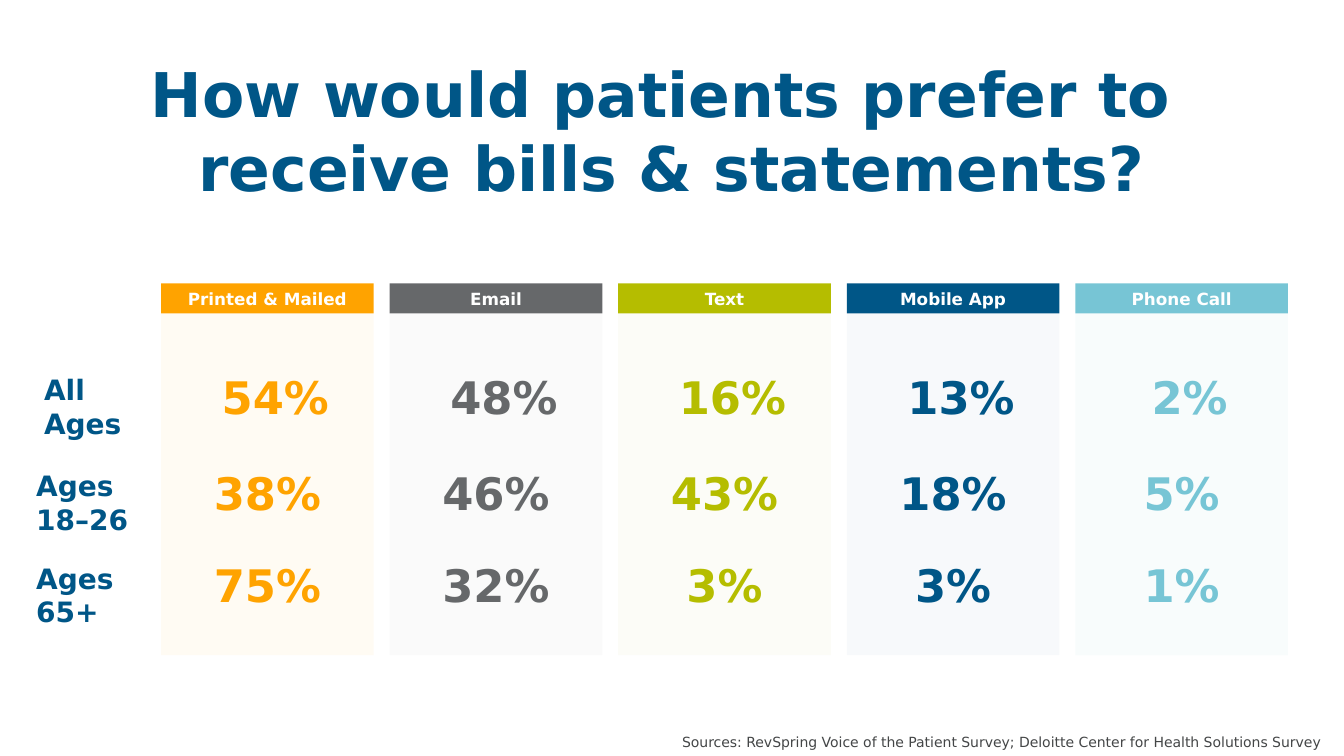
"""Build the slide on how patients prefer to receive bills and statements."""

from dataclasses import dataclass
from typing import Optional

import lxml.etree
import pptx
import pptx.dml.color
import pptx.enum.shapes
import pptx.enum.text
import pptx.oxml.ns
import pptx.shapes.autoshape
import pptx.slide
import pptx.text.text
import pptx.util

Cm = pptx.util.Cm
ALIGN = pptx.enum.text.PP_ALIGN

FONT = "DejaVu Sans"
COLORS = {
    "orange": "FFA300",
    "cream": "FFEDCC",
    "gray": "66686A",
    "green": "B5BD00",
    "blue": "005687",
    "aqua": "77C5D5",
    "white": "FFFFFF",
    "source": "444647",
}

COLUMN_LEFT, COLUMN_PITCH, COLUMN_WIDTH = 4.06, 5.76, 5.36
HEADER_TOP, HEADER_HEIGHT, PANEL_HEIGHT = 7.14, 0.76, 8.61
VALUE_WIDTH, VALUE_HEIGHT = 3.73, 1.63


@dataclass(frozen=True)
class Box:
    """Position and size in centimetres."""

    left: float
    top: float
    width: float
    height: float

    def lengths(self) -> tuple:
        """Return the four lengths in slide units."""
        return Cm(self.left), Cm(self.top), Cm(self.width), Cm(self.height)


@dataclass(frozen=True)
class TextStyle:
    """Look of one piece of text."""

    size: float
    color: str
    bold: bool = True
    alignment: pptx.enum.text.PP_ALIGN = ALIGN.LEFT


@dataclass(frozen=True)
class Channel:
    """A delivery channel with one value for each age group."""

    name: str
    color: str
    panel_color: str
    panel_opacity: int
    values: tuple[str, ...]


@dataclass(frozen=True)
class AgeGroup:
    """A row of values, with the sideways shift of its texts."""

    label: str
    top: float
    shift: float = 0


CHANNELS = (
    Channel("Printed & Mailed", "orange", "cream", 22, ("54%", "38%", "75%")),
    Channel("Email", "gray", "gray", 3, ("48%", "46%", "32%")),
    Channel("Text", "green", "green", 3, ("16%", "43%", "3%")),
    Channel("Mobile App", "blue", "blue", 3, ("13%", "18%", "3%")),
    Channel("Phone Call", "aqua", "aqua", 5, ("2%", "5%", "1%")),
)
AGE_GROUPS = (
    AgeGroup("All Ages", 9.19, 0.2),
    AgeGroup("Ages 18–26", 11.6),
    AgeGroup("Ages 65+", 13.94),
)


def rgb(name: str) -> pptx.dml.color.RGBColor:
    """Look up a named colour."""
    return pptx.dml.color.RGBColor.from_string(COLORS[name])


def write_text(text_frame: pptx.text.text.TextFrame, text: str, style: TextStyle) -> None:
    """Fill a text frame and format its runs."""
    text_frame.text = text
    text_frame.word_wrap = True
    for paragraph in text_frame.paragraphs:
        paragraph.alignment = style.alignment
        for run in paragraph.runs:
            run.font.name = FONT
            run.font.size = pptx.util.Pt(style.size)
            run.font.bold = style.bold
            run.font.color.rgb = rgb(style.color)


def add_text(slide: pptx.slide.Slide, box: Box, text: str, style: TextStyle) -> None:
    """Add a text box."""
    shape = slide.shapes.add_textbox(*box.lengths())
    write_text(shape.text_frame, text, style)


def add_rectangle(
    slide: pptx.slide.Slide, box: Box, color: str, opacity: Optional[int] = None
) -> pptx.shapes.autoshape.Shape:
    """Add a borderless rectangle, see-through if an opacity percentage is given."""
    shape = slide.shapes.add_shape(
        pptx.enum.shapes.MSO_SHAPE.RECTANGLE, *box.lengths()
    )
    shape.shadow.inherit = False
    shape.line.fill.background()
    shape.fill.solid()
    shape.fill.fore_color.rgb = rgb(color)
    if opacity is not None:
        qn = pptx.oxml.ns.qn
        fill_color = shape.element.spPr.find(f"{qn('a:solidFill')}/{qn('a:srgbClr')}")
        alpha = lxml.etree.SubElement(fill_color, qn("a:alpha"))
        alpha.set("val", str(opacity * 1000))
    return shape


def add_title(slide: pptx.slide.Slide, text: str) -> None:
    """Place and format the title placeholder."""
    title = slide.shapes.title
    title.left, title.top, title.width, title.height = Box(0, 0.18, 33.87, 6.2).lengths()
    frame = title.text_frame
    frame.margin_left = frame.margin_right = frame.margin_top = frame.margin_bottom = 0
    frame.vertical_anchor = pptx.enum.text.MSO_ANCHOR.MIDDLE
    frame.auto_size = pptx.enum.text.MSO_AUTO_SIZE.NONE
    write_text(frame, text, TextStyle(44, "blue", alignment=ALIGN.CENTER))


def add_channel(slide: pptx.slide.Slide, channel: Channel, left: float) -> None:
    """Draw one column: panel, header and values."""
    panel = Box(left, HEADER_TOP + HEADER_HEIGHT, COLUMN_WIDTH, PANEL_HEIGHT)
    add_rectangle(slide, panel, channel.panel_color, channel.panel_opacity)
    header = add_rectangle(
        slide, Box(left, HEADER_TOP, COLUMN_WIDTH, HEADER_HEIGHT), channel.color
    )
    header_style = TextStyle(12, "white", alignment=ALIGN.CENTER)
    write_text(header.text_frame, channel.name, header_style)
    value_left = left + (COLUMN_WIDTH - VALUE_WIDTH) / 2
    value_style = TextStyle(32, channel.color, alignment=ALIGN.CENTER)
    for group, value in zip(AGE_GROUPS, channel.values):
        box = Box(value_left + group.shift, group.top, VALUE_WIDTH, VALUE_HEIGHT)
        add_text(slide, box, value, value_style)


def main() -> None:
    """Build and save the presentation."""
    presentation = pptx.Presentation()
    presentation.slide_width, presentation.slide_height = Cm(33.87), Cm(19.05)
    slide = presentation.slides.add_slide(presentation.slide_layouts[5])
    add_title(slide, "How would patients prefer to \vreceive bills & statements?")
    for index, channel in enumerate(CHANNELS):
        add_channel(slide, channel, COLUMN_LEFT + index * COLUMN_PITCH)
    for group in AGE_GROUPS:
        box = Box(0.66 + group.shift, group.top + 0.08, 3.2, 1.96)
        add_text(slide, box, group.label, TextStyle(20, "blue"))
    add_text(
        slide,
        Box(16.94, 18.36, 16.92, 0.69),
        "Sources: RevSpring Voice of the Patient Survey; "
        "Deloitte Center for Health Solutions Survey",
        TextStyle(10, "source", bold=False),
    )
    presentation.save("out.pptx")


if __name__ == "__main__":
    main()
